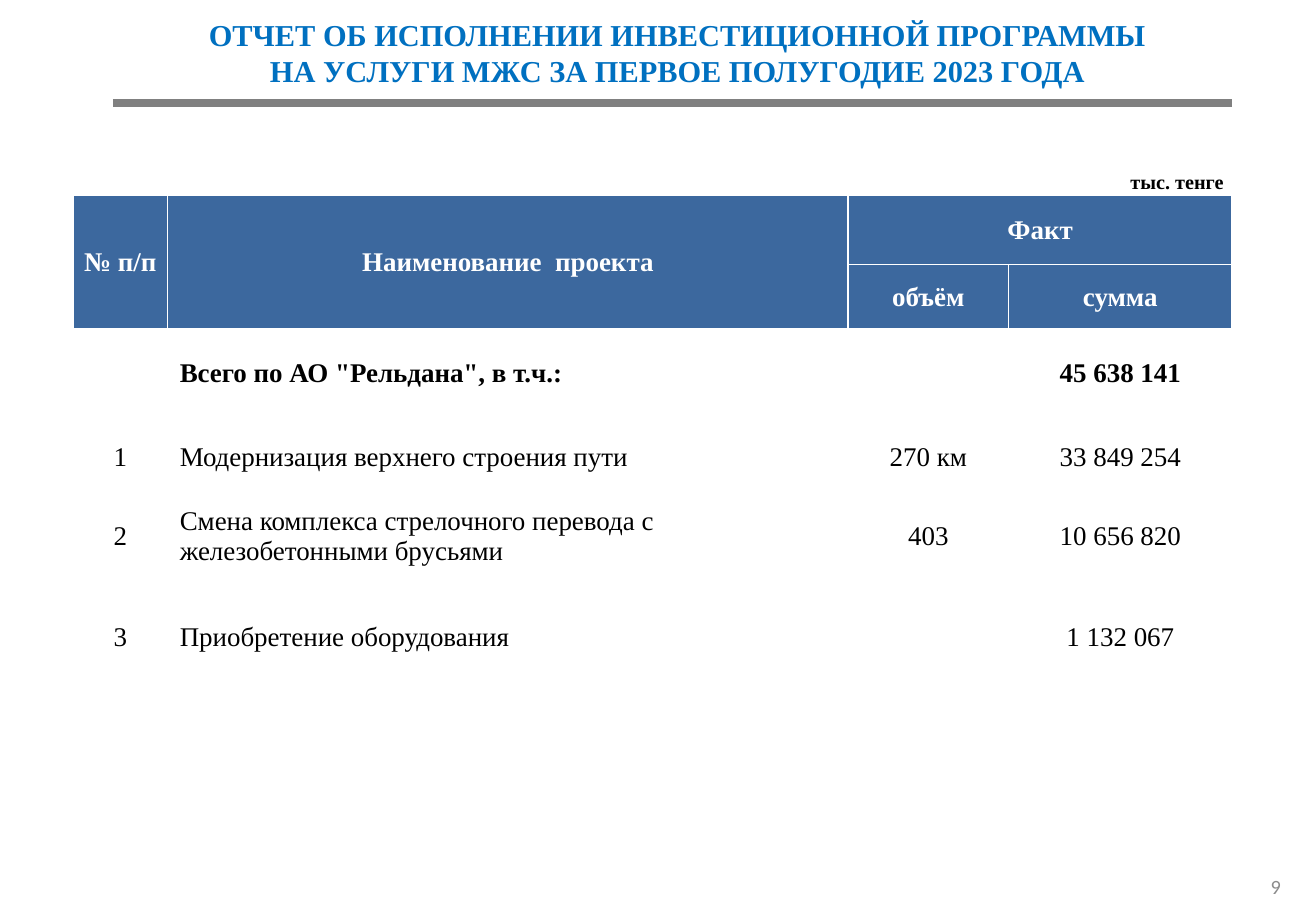
from lxml.etree import SubElement
from pptx import Presentation
from pptx.dml.color import RGBColor
from pptx.enum.text import MSO_ANCHOR as Anchor, PP_ALIGN as Align
from pptx.oxml.ns import qn
from pptx.util import Inches, Pt

SERIF = "Times New Roman"
BLACK, WHITE, HEADER_BLUE = "000000", "FFFFFF", "3C689E"

COLUMN_WIDTHS = [0.78, 5.6, 1.32, 1.84]
ROW_HEIGHTS = [0.57, 0.53, 0.73, 0.65, 0.65, 1.01]
HEADER_ROWS = 2
PROJECT_COLUMN = 1
HEADER_MERGES = [((0, 0), (1, 0)), ((0, 1), (1, 1)), ((0, 2), (0, 3))]
REPORT = [
    ["№ п/п", "Наименование  проекта", "Факт", ""],
    ["", "", "объём", "сумма"],
    ["", 'Всего по АО "Рельдана", в т.ч.:', "", "45 638 141"],
    ["1", "Модернизация верхнего строения пути", "270 км", "33 849 254"],
    ["2", "Смена комплекса стрелочного перевода с железобетонными брусьями",
     "403", "10 656 820"],
    ["3", "Приобретение оборудования", "", "1 132 067"],
]


def rgb(value):
    return RGBColor.from_string(value)


def write_lines(frame, lines, color, align, **font_format):
    for number, line in enumerate(lines):
        paragraph = frame.add_paragraph() if number else frame.paragraphs[0]
        paragraph.text = line
        paragraph.alignment = align
        paragraph.font.color.rgb = rgb(color)
        for attribute, value in font_format.items():
            setattr(paragraph.font, attribute, value)


def add_label(slide, box, lines, color, align, anchor=Anchor.MIDDLE, **font_format):
    frame = slide.shapes.add_textbox(*map(Inches, box)).text_frame
    frame.word_wrap = True
    frame.vertical_anchor = anchor
    write_lines(frame, lines, color, align, **font_format)


def add_rule(slide, left, right, top, color, weight):
    rule = slide.shapes.add_connector(
        1, Inches(left), Inches(top), Inches(right), Inches(top))
    rule.line.color.rgb = rgb(color)
    rule.line.width = Pt(weight)
    SubElement(rule._element.spPr, qn("a:effectLst"))


def add_borders(cell, color, weight):
    properties = cell._tc.get_or_add_tcPr()
    for position, side in enumerate(("a:lnL", "a:lnR", "a:lnT", "a:lnB")):
        border = SubElement(properties, qn(side), w=str(Pt(weight)))
        fill = SubElement(border, qn("a:solidFill"))
        SubElement(fill, qn("a:srgbClr"), val=color)
        properties.insert(position, border)


def format_cell(cell, text, row, column):
    is_header = row < HEADER_ROWS
    is_project = column == PROJECT_COLUMN and not is_header
    layout = {
        "margin_left": Inches(0.1 if is_project else 0),
        "margin_right": 0,
        "margin_top": 0,
        "margin_bottom": 0,
        "vertical_anchor": Anchor.MIDDLE,
    }
    for attribute, value in layout.items():
        setattr(cell, attribute, value)
    if is_header:
        cell.fill.solid()
        cell.fill.fore_color.rgb = rgb(HEADER_BLUE)
        add_borders(cell, WHITE, 1)
    else:
        cell.fill.background()
    if text:
        write_lines(cell.text_frame, [text], WHITE if is_header else BLACK,
                    Align.LEFT if is_project else Align.CENTER,
                    name=SERIF, size=Pt(16), bold=row <= HEADER_ROWS)


def add_report_table(slide, left, top):
    table = slide.shapes.add_table(
        len(ROW_HEIGHTS), len(COLUMN_WIDTHS), Inches(left), Inches(top),
        Inches(sum(COLUMN_WIDTHS)), Inches(sum(ROW_HEIGHTS))).table
    table.first_row = table.horz_banding = False
    for column, width in zip(table.columns, COLUMN_WIDTHS):
        column.width = Inches(width)
    for row, height in zip(table.rows, ROW_HEIGHTS):
        row.height = Inches(height)
    for first, last in HEADER_MERGES:
        table.cell(*first).merge(table.cell(*last))
    for row, texts in enumerate(REPORT):
        for column, text in enumerate(texts):
            format_cell(table.cell(row, column), text, row, column)


def main():
    deck = Presentation()
    deck.slide_width, deck.slide_height = Inches(10.83), Inches(7.5)
    slide = deck.slides.add_slide(deck.slide_layouts[6])

    add_label(slide, (0.88, 0.08, 9.39, 0.71),
              ["ОТЧЕТ ОБ ИСПОЛНЕНИИ ИНВЕСТИЦИОННОЙ ПРОГРАММЫ",
               "НА УСЛУГИ МЖС ЗА ПЕРВОЕ ПОЛУГОДИЕ 2023 ГОДА"],
              "0070C0", Align.CENTER, Anchor.TOP,
              name=SERIF, size=Pt(18), bold=True)
    add_rule(slide, 0.93, 10.14, 0.85, "808080", 4.5)
    add_label(slide, (8.91, 1.34, 1.26, 0.31), ["тыс. тенге"], BLACK,
              Align.RIGHT, name=SERIF, size=Pt(12), bold=True)
    add_report_table(slide, 0.6, 1.61)
    add_label(slide, (8.39, 7.1, 2.25, 0.4), ["9"], "8C8C8C",
              Align.RIGHT, name="Calibri", size=Pt(12))

    deck.save("out.pptx")


if __name__ == "__main__":
    main()
